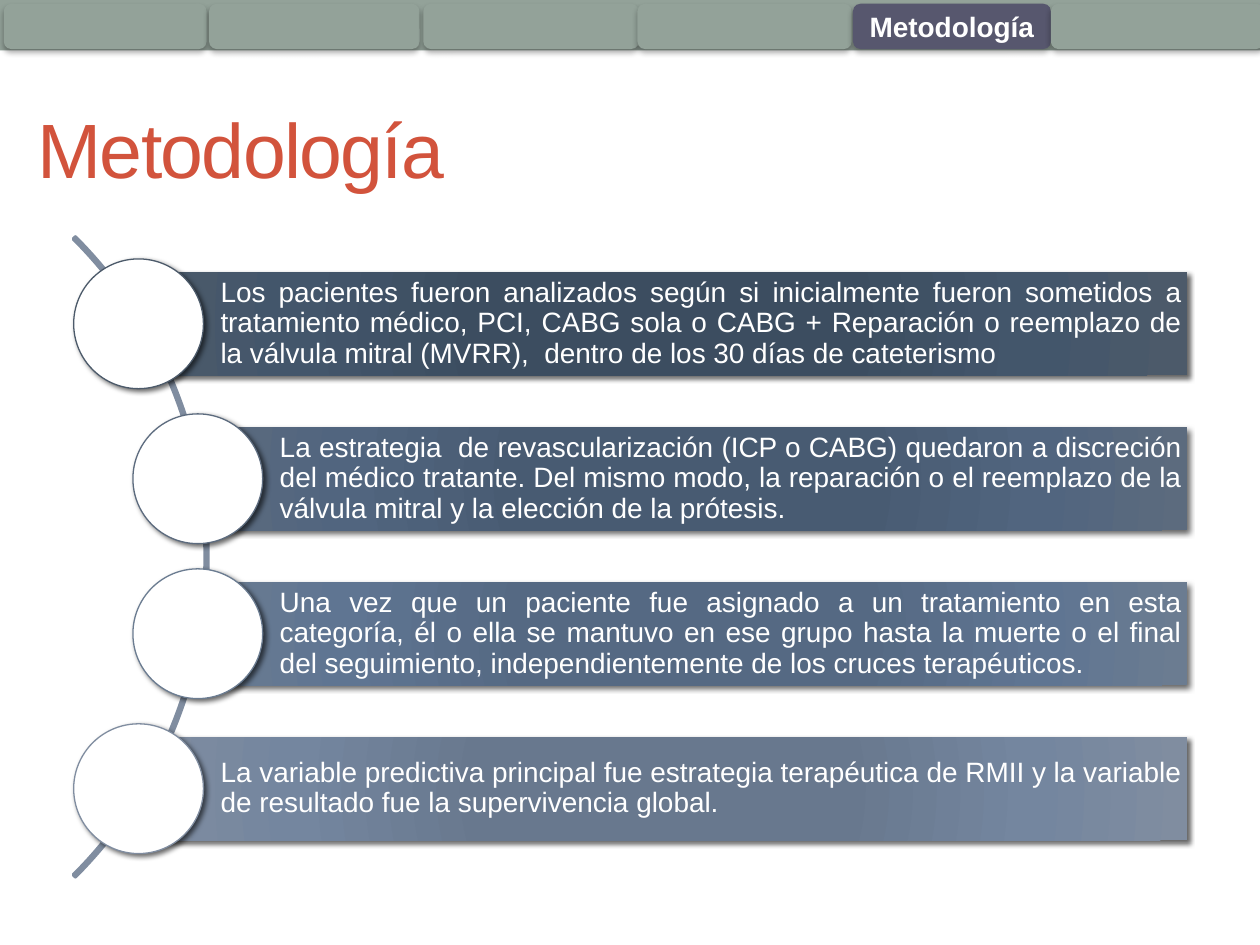
from lxml import etree
from pptx import Presentation
from pptx.dml.color import RGBColor
from pptx.enum.shapes import MSO_SHAPE
from pptx.enum.text import MSO_ANCHOR, PP_ALIGN
from pptx.oxml.ns import qn
from pptx.util import Inches, Pt

RECTANGLE, ROUNDED = MSO_SHAPE.RECTANGLE, MSO_SHAPE.ROUNDED_RECTANGLE
OVAL, BLOCK_ARC = MSO_SHAPE.OVAL, MSO_SHAPE.BLOCK_ARC
MIDDLE = MSO_ANCHOR.MIDDLE
LEFT, CENTER, JUSTIFY = PP_ALIGN.LEFT, PP_ALIGN.CENTER, PP_ALIGN.JUSTIFY

TITLE = "Metodología"
TABS = [
    (0.03, 1.61, ""),
    (1.66, 1.67, ""),
    (3.36, 1.71, ""),
    (5.06, 1.70, ""),
    (6.77, 1.57, "Metodología"),
    (8.34, 1.69, ""),
]
STEPS = [
    (1.10, "Los pacientes fueron analizados según si inicialmente fueron sometidos a "
           "tratamiento médico, PCI, CABG sola o CABG + Reparación o reemplazo de la "
           "válvula mitral (MVRR),  dentro de los 30 días de cateterismo"),
    (1.57, "La estrategia  de revascularización (ICP o CABG) quedaron a discreción del "
           "médico tratante. Del mismo modo, la reparación o el reemplazo de la válvula "
           "mitral y la elección de la prótesis."),
    (1.57, "Una vez que un paciente fue asignado a un tratamiento en esta categoría, él o "
           "ella se mantuvo en ese grupo hasta la muerte o el final del seguimiento, "
           "independientemente de los cruces terapéuticos."),
    (1.10, "La variable predictiva principal fue estrategia terapéutica de RMII y la "
           "variable de resultado fue la supervivencia global."),
]
THEME = {
    "font": "Arial",
    "title_size": 44,
    "body_size": 16,
    "title": "D2533C",
    "white": "FFFFFF",
    "tab": "93A299",
    "active_tab": "57576E",
    "arc": "808DA0",
    "stops": (0, 34, 70, 100),
    "bars": [
        ("3B4D61", "3C4D60", "43566B", "4C5A6A"),
        ("475B73", "485B72", "51657F", "5C6B7E"),
        ("546985", "556983", "5F7592", "6B7C91"),
        ("677790", "68788E", "74869F", "808DA0"),
    ],
    "tab_shadow": (32, 3.5, 2.2, 90),
    "step_shadow": (60, 3, 2, 45),
}
BAR_RIGHT, BAR_HEIGHT, FIRST_BAR_TOP, BAR_PITCH = 9.42, 0.82, 2.16, 1.23
CIRCLE = 1.03


def add_color(parent, color):
    return etree.SubElement(parent, qn("a:srgbClr"), val=color)


def set_shadow(shape, settings):
    alpha, blur, distance, angle = settings
    effects = shape._element.spPr.find(qn("a:effectLst"))
    shadow = etree.SubElement(
        effects, qn("a:outerShdw"), blurRad=str(Pt(blur)), dist=str(Pt(distance)),
        dir=str(angle * 60000), rotWithShape="0")
    etree.SubElement(add_color(shadow, "000000"), qn("a:alpha"), val=str(alpha * 1000))


def set_radial_fill(shape, colors):
    shape.fill.gradient()
    gradient = shape._element.spPr.find(qn("a:gradFill"))
    for child in list(gradient):
        gradient.remove(child)
    stop_list = etree.SubElement(gradient, qn("a:gsLst"))
    for position, color in zip(THEME["stops"], colors):
        add_color(etree.SubElement(stop_list, qn("a:gs"), pos=str(position * 1000)), color)
    radial = etree.SubElement(gradient, qn("a:path"), path="circle")
    etree.SubElement(radial, qn("a:fillToRect"), l="100000", t="100000", r="100000", b="100000")


def add_shape(page, kind, place, fill=None, line=None, width=0.75, shadow=None):
    shape = page.shapes.add_shape(kind, *map(Inches, place))
    shape.shadow.inherit = False
    if fill is None:
        shape.fill.background()
    elif isinstance(fill, tuple):
        set_radial_fill(shape, fill)
    else:
        shape.fill.solid()
        shape.fill.fore_color.rgb = RGBColor.from_string(fill)
    if line:
        shape.line.color.rgb = RGBColor.from_string(line)
        shape.line.width = Pt(width)
    else:
        shape.line.fill.background()
    if shadow:
        set_shadow(shape, shadow)
    return shape


def write(box, text, size, color, align, bold=False):
    frame = box.text_frame
    frame.word_wrap = True
    frame.vertical_anchor = MIDDLE
    frame.text = text
    para = frame.paragraphs[0]
    para.alignment = align
    span = para.runs[0]
    span.font.name = THEME["font"]
    span.font.size = Pt(size)
    span.font.bold = bold
    span.font.color.rgb = RGBColor.from_string(color)
    return para


def add_header(page):
    add_shape(page, RECTANGLE, (0, 0, 10, 0.4), THEME["tab"])
    for left, width, label in TABS:
        fill = THEME["active_tab"] if label else THEME["tab"]
        tab = add_shape(page, ROUNDED, (left, 0.03, width, 0.36), fill,
                        shadow=THEME["tab_shadow"])
        if label:
            write(tab, label, THEME["body_size"], THEME["white"], CENTER, bold=True)
    box = page.shapes.add_textbox(*map(Inches, (0.2, 0.77, 9, 0.8)))
    para = write(box, TITLE, THEME["title_size"], THEME["title"], LEFT)
    para.runs[0].font._element.set("spc", "-100")


def add_steps(page):
    arc = add_shape(page, BLOCK_ARC, (-5.53, 0.83, 7.18, 7.18), line=THEME["arc"], width=2.08)
    for index, value in enumerate((189, 27, 0.003)):
        arc.adjustments[index] = value
    for index, ((left, text), colors) in enumerate(zip(STEPS, THEME["bars"])):
        top = FIRST_BAR_TOP + index * BAR_PITCH
        bar = add_shape(page, RECTANGLE, (left, top, BAR_RIGHT - left, BAR_HEIGHT), colors,
                        shadow=THEME["step_shadow"])
        frame = bar.text_frame
        frame.margin_left = Inches(0.65)
        frame.margin_top = frame.margin_right = frame.margin_bottom = Inches(0.04)
        para = write(bar, text, THEME["body_size"], THEME["white"], JUSTIFY)
        para.line_spacing = 0.9
        circle_top = top + (BAR_HEIGHT - CIRCLE) / 2
        add_shape(page, OVAL, (left - CIRCLE / 2, circle_top, CIRCLE, CIRCLE), THEME["white"],
                  line=colors[-1], shadow=THEME["step_shadow"])


def main():
    deck = Presentation()
    deck.slide_width, deck.slide_height = Inches(10), Inches(7.5)
    page = deck.slides.add_slide(deck.slide_layouts[6])
    add_header(page)
    add_steps(page)
    deck.save("out.pptx")


if __name__ == "__main__":
    main()
